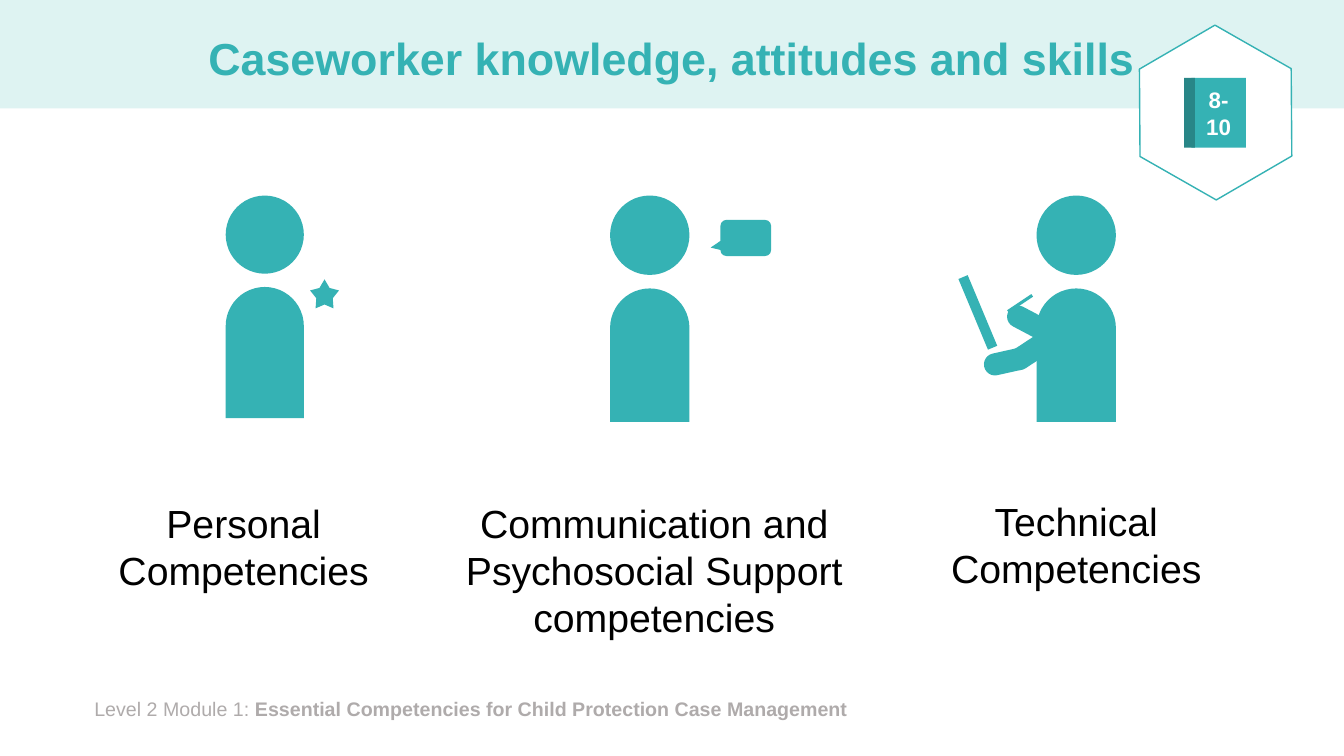
from lxml.etree import SubElement
from pptx import Presentation
from pptx.dml.color import RGBColor
from pptx.enum.shapes import MSO_CONNECTOR, MSO_SHAPE
from pptx.enum.text import MSO_ANCHOR, PP_ALIGN
from pptx.oxml.ns import qn
from pptx.util import Pt

TEAL = "35B2B4"
DARK_TEAL = "288687"
PALE_TEAL = "DEF3F2"
GREY = "AFABAB"
WHITE = "FFFFFF"
BLACK = "000000"


def colour(hex_string):
    return RGBColor.from_string(hex_string)


class SlideBuilder:
    """Holds the style, the page and the shape collection being filled."""

    font = "Arial"
    accent = TEAL

    def __init__(self, page):
        self.page = page
        self.shapes = page.shapes

    def start_group(self):
        """Send the following shapes to a new group."""
        self.shapes = self.page.shapes.add_group_shape().shapes

    def add_runs(self, frame, runs, size, text_colour, align=PP_ALIGN.CENTER):
        """Fill the first paragraph with (text, bold) runs."""
        frame.word_wrap = True
        para = frame.paragraphs[0]
        para.alignment = align
        for text, bold in runs:
            span = para.add_run()
            span.text = text
            span.font.name = self.font
            span.font.size = Pt(size)
            span.font.bold = bold
            span.font.color.rgb = colour(text_colour)
        return para

    def title(self, text, left, top, width, height):
        """Format the title placeholder and bring it in front of the band."""
        box = self.page.shapes.title
        box.left, box.top, box.width, box.height = map(Pt, (left, top, width, height))
        box.text_frame.vertical_anchor = MSO_ANCHOR.MIDDLE
        para = self.add_runs(box.text_frame, [(text, True)], 32, self.accent)
        para.line_spacing = 0.9
        self.page.shapes.element.append(box.element)

    def text(self, runs, left, top, width, height, size, text_colour, align=PP_ALIGN.CENTER):
        box = self.page.shapes.add_textbox(Pt(left), Pt(top), Pt(width), Pt(height))
        self.add_runs(box.text_frame, runs, size, text_colour, align)

    def shape(self, kind, left, top, width, height, fill=None, line=None,
              rotation=0, adjustments=()):
        shape = self.shapes.add_shape(kind, Pt(left), Pt(top), Pt(width), Pt(height))
        shape.shadow.inherit = False
        shape.rotation = rotation
        shape.fill.solid()
        shape.fill.fore_color.rgb = colour(fill or self.accent)
        if line:
            shape.line.color.rgb = colour(line)
            shape.line.width = Pt(1)
        else:
            shape.line.fill.background()
        for index, value in enumerate(adjustments):
            shape.adjustments[index] = value
        return shape

    def line(self, start_x, start_y, end_x, end_y, width):
        line = self.shapes.add_connector(
            MSO_CONNECTOR.STRAIGHT, Pt(start_x), Pt(start_y), Pt(end_x), Pt(end_y))
        line.line.color.rgb = colour(self.accent)
        line.line.width = Pt(width)
        SubElement(line.element.spPr, qn("a:effectLst"))

    def person(self, left, size):
        """Start a group with a round head above a round-shouldered body."""
        top = 139.7
        self.start_group()
        self.shape(MSO_SHAPE.ROUND_2_SAME_RECTANGLE, left, top + 1.17 * size,
                   size, 1.68 * size, adjustments=(0.5, 0))
        self.shape(MSO_SHAPE.OVAL, left, top, size, size)


def main():
    deck = Presentation()
    deck.slide_width, deck.slide_height = Pt(960), Pt(540)
    builder = SlideBuilder(deck.slides.add_slide(deck.slide_layouts[5]))

    builder.shape(MSO_SHAPE.RECTANGLE, 0, 0, 960, 77.5, PALE_TEAL)
    builder.text([("Level 2 Module 1: ", False),
                  ("Essential Competencies for Child Protection Case Management", True)],
                 60.3, 494.6, 760, 24.5, 14, GREY, PP_ALIGN.LEFT)
    builder.title("Caseworker knowledge, attitudes and skills", 66, 9.4, 828, 68.4)

    captions = [
        ("Personal Competencies", 54, 352.8, 240, 75),
        ("Communication and Psychosocial Support competencies", 299.5, 352.8, 335.5, 109),
        ("Technical Competencies", 648.7, 351.7, 240, 75),
    ]
    for caption, left, top, width, height in captions:
        builder.text([(caption, False)], left, top, width, height, 28, BLACK)

    # Page badge
    builder.start_group()
    builder.shape(MSO_SHAPE.HEXAGON, 805.7, 26.4, 125.3, 108, WHITE, TEAL, 29.7, (0.29, 1.155))
    book = builder.shape(MSO_SHAPE.RECTANGLE, 851, 55.6, 39, 50)
    book.text_frame.vertical_anchor = MSO_ANCHOR.MIDDLE
    builder.add_runs(book.text_frame, [("8-10", True)], 16, WHITE)
    builder.shape(MSO_SHAPE.RECTANGLE, 845.8, 55.6, 7.8, 50, DARK_TEAL)

    # Personal: person with a star
    builder.person(161.2, 55.8)
    builder.shape(MSO_SHAPE.STAR_5_POINT, 221.5, 199.6, 20.7, 20.7,
                  adjustments=(0.285, 1.051, 1.106))

    # Communication: person with a speech bubble
    builder.person(435.8, 56.7)
    builder.shape(MSO_SHAPE.ROUNDED_RECTANGULAR_CALLOUT, 514.6, 157.1, 36.2, 25.8,
                  adjustments=(-0.693, 0.266, 0.167))

    # Technical: person writing on a clipboard
    builder.person(740.4, 56.7)
    arm_parts = [
        (729.4, 231.8, 15.8, 37.4, 236.7),
        (707.8, 246.2, 15.8, 25.9, 257.4),
        (731.5, 211, 15.8, 43.2, 297.9),
    ]
    for left, top, width, height, rotation in arm_parts:
        builder.shape(MSO_SHAPE.ROUND_2_SAME_RECTANGLE, left, top, width, height,
                      rotation=rotation, adjustments=(0.493, 0))
    builder.shape(MSO_SHAPE.RECTANGLE, 694.9, 195.8, 7.2, 54.7, rotation=337.3)
    builder.line(737.3, 211, 720, 222.5, 2.25)

    deck.save("out.pptx")


if __name__ == "__main__":
    main()
